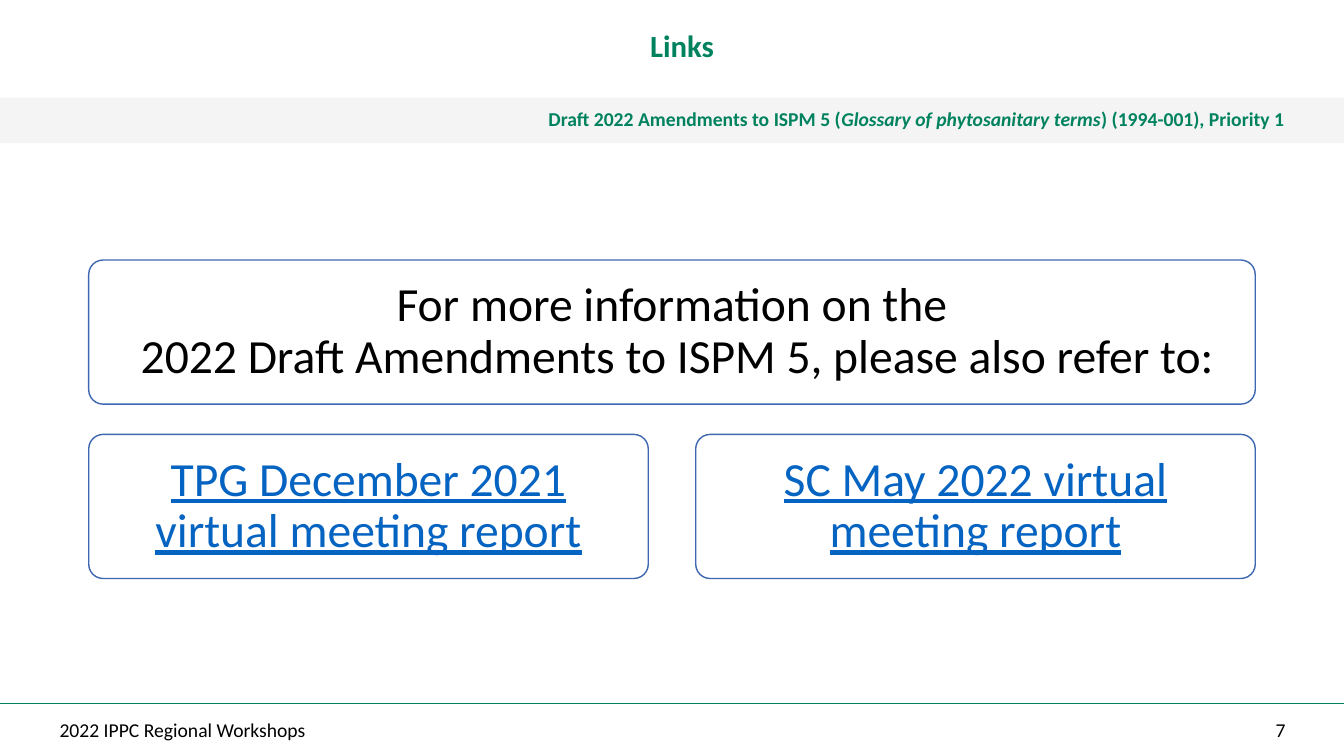
from dataclasses import dataclass

from lxml.etree import SubElement
from pptx import Presentation
from pptx.dml.color import RGBColor
from pptx.enum.shapes import MSO_CONNECTOR, MSO_SHAPE
from pptx.enum.text import MSO_ANCHOR, PP_ALIGN
from pptx.oxml.ns import qn
from pptx.util import Emu, Pt

PX = 9144  # EMU, 100 px to the inch
PAGE_WIDTH, PAGE_HEIGHT = 1333, 750
GREEN, BLACK, LINK_BLUE, EDGE_BLUE = "00825F", "000000", "0563C1", "3E67B2"
LEFT, CENTER, RIGHT = PP_ALIGN.LEFT, PP_ALIGN.CENTER, PP_ALIGN.RIGHT


@dataclass
class Frame:
    left: int
    top: int
    width: int
    height: int


@dataclass
class Span:
    text: str
    italic: bool = False


@dataclass
class Style:
    size: int
    color: str
    align: PP_ALIGN = LEFT
    bold: bool = False
    underline: bool = False
    insets: tuple[int, int, int, int] = (59, 5, 59, 5)


@dataclass
class Card:
    frame: Frame
    lines: list[list[Span]]
    style: Style


def px(length: int) -> Emu:
    return Emu(length * PX)


def rgb(color: str) -> RGBColor:
    return RGBColor.from_string(color)


def place(frame: Frame) -> tuple[Emu, Emu, Emu, Emu]:
    return px(frame.left), px(frame.top), px(frame.width), px(frame.height)


def write(box, lines: list[list[Span]], style: Style) -> None:
    """Fill a box with one paragraph, its lines split by line breaks."""
    text_frame = box.text_frame
    text_frame.word_wrap = True
    text_frame.vertical_anchor = MSO_ANCHOR.MIDDLE
    (text_frame.margin_left, text_frame.margin_top,
     text_frame.margin_right, text_frame.margin_bottom) = map(px, style.insets)
    para = text_frame.paragraphs[0]
    para.alignment = style.align
    para.line_spacing = 0.9
    for index, line in enumerate(lines):
        if index:
            para.add_line_break()
        for span in line:
            run = para.add_run()
            run.text = span.text
            run.font.name = "Calibri"
            run.font.size = Pt(style.size)
            run.font.bold = style.bold
            run.font.italic = span.italic
            run.font.underline = style.underline
            run.font.color.rgb = rgb(style.color)


def add_text(page, frame: Frame, text: str, style: Style) -> None:
    write(page.shapes.add_textbox(*place(frame)), [[Span(text)]], style)


def add_panel(page, kind: MSO_SHAPE, frame: Frame, fill: str):
    panel = page.shapes.add_shape(kind, *place(frame))
    panel.shadow.inherit = False
    panel.fill.solid()
    panel.fill.fore_color.rgb = rgb(fill)
    return panel


def add_band(page, frame: Frame, spans: list[Span], style: Style) -> None:
    band = add_panel(page, MSO_SHAPE.RECTANGLE, frame, "E7E6E6")
    band.line.fill.background()
    color = band.fill._xPr.find(qn("a:solidFill"))[0]
    SubElement(color, qn("a:alpha"), val="42000")
    write(band, [spans], style)


def add_card(page, card: Card) -> None:
    panel = add_panel(page, MSO_SHAPE.ROUNDED_RECTANGLE, card.frame, "FFFFFF")
    panel.adjustments[0] = 0.1
    panel.line.color.rgb = rgb(EDGE_BLUE)
    panel.line.width = Pt(1)
    write(panel, card.lines, card.style)


def add_rule(page, top: int) -> None:
    rule = page.shapes.add_connector(
        MSO_CONNECTOR.STRAIGHT, 0, px(top), px(PAGE_WIDTH), px(top))
    rule.line.color.rgb = rgb(GREEN)
    rule.line.width = Pt(1)
    SubElement(rule._element.spPr, qn("a:effectLst"))


def main() -> None:
    deck = Presentation()
    deck.slide_width, deck.slide_height = px(PAGE_WIDTH), px(PAGE_HEIGHT)
    page = deck.slides.add_slide(deck.slide_layouts[6])

    # Footer
    add_rule(page, 698)
    add_text(page, Frame(0, 706, 825, 38), "2022 IPPC Regional Workshops", Style(14, BLACK))
    add_text(page, Frame(1192, 706, 142, 38), "7", Style(14, BLACK, RIGHT))

    # Title and subject band
    add_text(page, Frame(0, 0, PAGE_WIDTH, 100), "Links",
             Style(22, GREEN, CENTER, bold=True, insets=(59, 0, 39, 5)))
    add_band(page, Frame(0, 97, PAGE_WIDTH, 45), [
        Span("Draft 2022 Amendments to ISPM 5 ("),
        Span("Glossary of phytosanitary terms", italic=True),
        Span(") (1994-001), Priority 1"),
    ], Style(14, GREEN, RIGHT, bold=True))

    # Heading card above two equal report cards
    left, top, width, height = 88, 258, 1157, 143
    column_gap, row_gap = 47, 30
    column = (width - column_gap) // 2
    insets = (14, 14, 14, 14)
    heading = Style(34, BLACK, CENTER, insets=insets)
    report = Style(34, LINK_BLUE, CENTER, underline=True, insets=insets)
    cards = [Card(Frame(left, top, width, height), [
        [Span("For more information on the")],
        [Span(" 2022 Draft Amendments to ISPM 5, please also refer to:")],
    ], heading)]
    reports = ["TPG December 2021 virtual meeting report",
               "SC May 2022 virtual meeting report"]
    for index, name in enumerate(reports):
        frame = Frame(left + index * (column + column_gap),
                      top + height + row_gap, column, height)
        cards.append(Card(frame, [[Span(name)]], report))
    for card in cards:
        add_card(page, card)

    deck.save("out.pptx")


if __name__ == "__main__":
    main()
